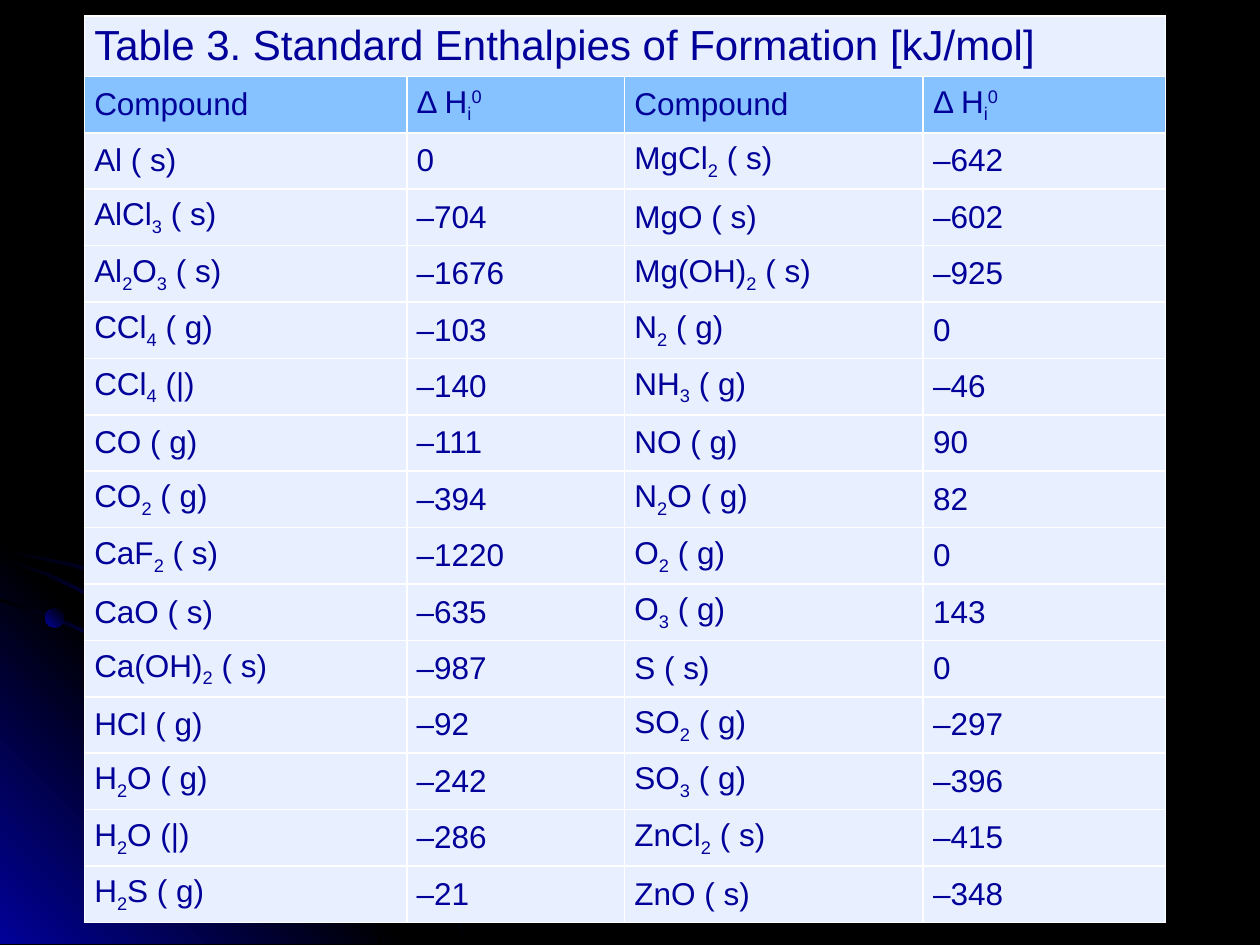
"""Build a slide with a table of standard enthalpies of formation."""
import itertools

import pptx
import pptx.dml.color
import pptx.enum.shapes
import pptx.enum.text
import pptx.util
from lxml import etree

Cm = pptx.util.Cm
NS = "http://schemas.openxmlformats.org/drawingml/2006/main"

TITLE = "Table 3. Standard Enthalpies of Formation [kJ/mol]"
HEAD = ("Compound", "Δ Hi0") * 2
ROWS = [
    ("Al ( s)", "0", "MgCl2 ( s)", "–642"),
    ("AlCl3 ( s)", "–704", "MgO ( s)", "–602"),
    ("Al2O3 ( s)", "–1676", "Mg(OH)2 ( s)", "–925"),
    ("CCl4 ( g)", "–103", "N2 ( g)", "0"),
    ("CCl4 (|)", "–140", "NH3 ( g)", "–46"),
    ("CO ( g)", "–111", "NO ( g)", "90"),
    ("CO2 ( g)", "–394", "N2O ( g)", "82"),
    ("CaF2 ( s)", "–1220", "O2 ( g)", "0"),
    ("CaO ( s)", "–635", "O3 ( g)", "143"),
    ("Ca(OH)2 ( s)", "–987", "S ( s)", "0"),
    ("HCl ( g)", "–92", "SO2 ( g)", "–297"),
    ("H2O ( g)", "–242", "SO3 ( g)", "–396"),
    ("H2O (|)", "–286", "ZnCl2 ( s)", "–415"),
    ("H2S ( g)", "–21", "ZnO ( s)", "–348"),
]
WIDTHS = (6.5, 4.39, 6.02, 4.88)
TOP, TALL, FIRST = 0.32, 18.28, 1.22
SUBS = {digit: -25 for digit in "0123456789"}
MARKS = {"i": -25, "0": 30}

BLUE, BLACK, WHITE, PALE, SKY = "010199", "000000", "FFFFFF", "E8EFFF", "85C2FF"
UNIT = Cm(0.0254)
FOOT = 749
WIDE_ARC = [(0, 435), (28, 441), (57, 447), (98, 459), (136, 477), (174, 497),
            (209, 521), (242, 548), (272, 578), (300, 611), (325, 648),
            (339, 673), (352, 698), (362, 723), (372, FOOT)]
LOW_ARC = [(0, 475), (41, 488), (79, 505), (117, 526), (152, 549), (184, 576),
           (215, 606), (242, 640), (266, 676), (286, 712), (296, 730), (303, FOOT)]
MID_ARC = [(0, 442), (39, 455), (76, 473), (111, 493), (144, 516), (175, 543),
           (204, 573), (229, 603), (254, 639), (269, 665), (282, 693),
           (294, 720), (303, FOOT)]
WEDGE = [(0, 427), (322, FOOT), (0, FOOT)]
DOTS = [(0.91, 12.27, 0.38, 315), (6.78, 17.12, 0.41, 45), (3.48, 12.01, 0.53, 315)]


def tint(code):
    return pptx.dml.color.RGBColor.from_string(code)


def node(mom, tag, **attrs):
    return etree.SubElement(mom, f"{{{NS}}}{tag}", attrs)


def shade(shape, codes, angle):
    shape.shadow.inherit = False
    shape.line.fill.background()
    shape.fill.gradient()
    grad = shape._element.spPr.find(f"{{{NS}}}gradFill")
    for kid in list(grad):
        grad.remove(kid)
    stops = node(grad, "gsLst")
    for i, code in enumerate(codes):
        stop = node(stops, "gs", pos=str(100000 * i // (len(codes) - 1)))
        node(stop, "srgbClr", val=code)
    node(grad, "lin", ang=str(angle * 60000), scaled="1")


def outline(shapes, points, codes, angle):
    pen = shapes.build_freeform(*points[0], scale=UNIT)
    pen.add_line_segments(points[1:], close=True)
    shade(pen.convert_to_shape(), codes, angle)


def ribbon(shapes, arc):
    under = [(max(x - 2, 0), min(y + 2, FOOT)) for x, y in reversed(arc)]
    outline(shapes, arc + under, (BLACK, BLUE, BLACK), 45)


def scene(shapes):
    ribbon(shapes, WIDE_ARC)
    outline(shapes, WEDGE, (BLUE, BLACK, BLUE), 315)
    for arc in (LOW_ARC, MID_ARC):
        ribbon(shapes, arc)
    for left, top, size, angle in DOTS:
        dot = shapes.add_shape(pptx.enum.shapes.MSO_SHAPE.OVAL,
                               Cm(left), Cm(top), Cm(size), Cm(size))
        shade(dot, (BLUE, BLACK), angle)


def style(cell, back):
    cell.margin_left = cell.margin_right = Cm(0.2)
    cell.margin_top = cell.margin_bottom = Cm(0.1)
    cell.vertical_anchor = pptx.enum.text.MSO_ANCHOR.MIDDLE
    props = cell._tc.get_or_add_tcPr()
    for side in ("lnL", "lnR", "lnT", "lnB"):
        edge = node(props, side, w="12700")
        node(node(edge, "solidFill"), "srgbClr", val=WHITE)
    cell.fill.solid()
    cell.fill.fore_color.rgb = tint(back)


def write(cell, text, marks, size):
    para = cell.text_frame.paragraphs[0]
    for base, chars in itertools.groupby(text, lambda c: marks.get(c, 0)):
        run = para.add_run()
        run.text = "".join(chars)
        run.font.name = "Arial"
        run.font.size = pptx.util.Pt(size)
        run.font.color.rgb = tint(BLUE)
        if base:
            run._r.get_or_add_rPr().set("baseline", str(base * 1000))


def grid(shapes):
    count = len(ROWS) + 2
    table = shapes.add_table(count, len(WIDTHS), Cm(1.7), Cm(TOP),
                             Cm(sum(WIDTHS)), Cm(TALL)).table
    table.first_row = table.horz_banding = False
    for col, width in zip(table.columns, WIDTHS):
        col.width = Cm(width)
    for i, row in enumerate(table.rows):
        row.height = Cm(FIRST if i == 0 else (TALL - FIRST) / (count - 1))
        for cell in row.cells:
            style(cell, SKY if i == 1 else PALE)
    table.cell(0, 0).merge(table.cell(0, len(WIDTHS) - 1))
    write(table.cell(0, 0), TITLE, {}, 24)
    for i, texts in enumerate([HEAD] + ROWS, 1):
        for j, text in enumerate(texts):
            marks = {} if j % 2 else SUBS
            write(table.cell(i, j), text, MARKS if i == 1 else marks, 18)


def main():
    deck = pptx.Presentation()
    deck.slide_width, deck.slide_height = Cm(25.4), Cm(19.05)
    slide = deck.slides.add_slide(deck.slide_layouts[6])
    slide.background.fill.solid()
    slide.background.fill.fore_color.rgb = tint(BLACK)
    scene(slide.shapes)
    grid(slide.shapes)
    deck.save("out.pptx")


if __name__ == "__main__":
    main()
